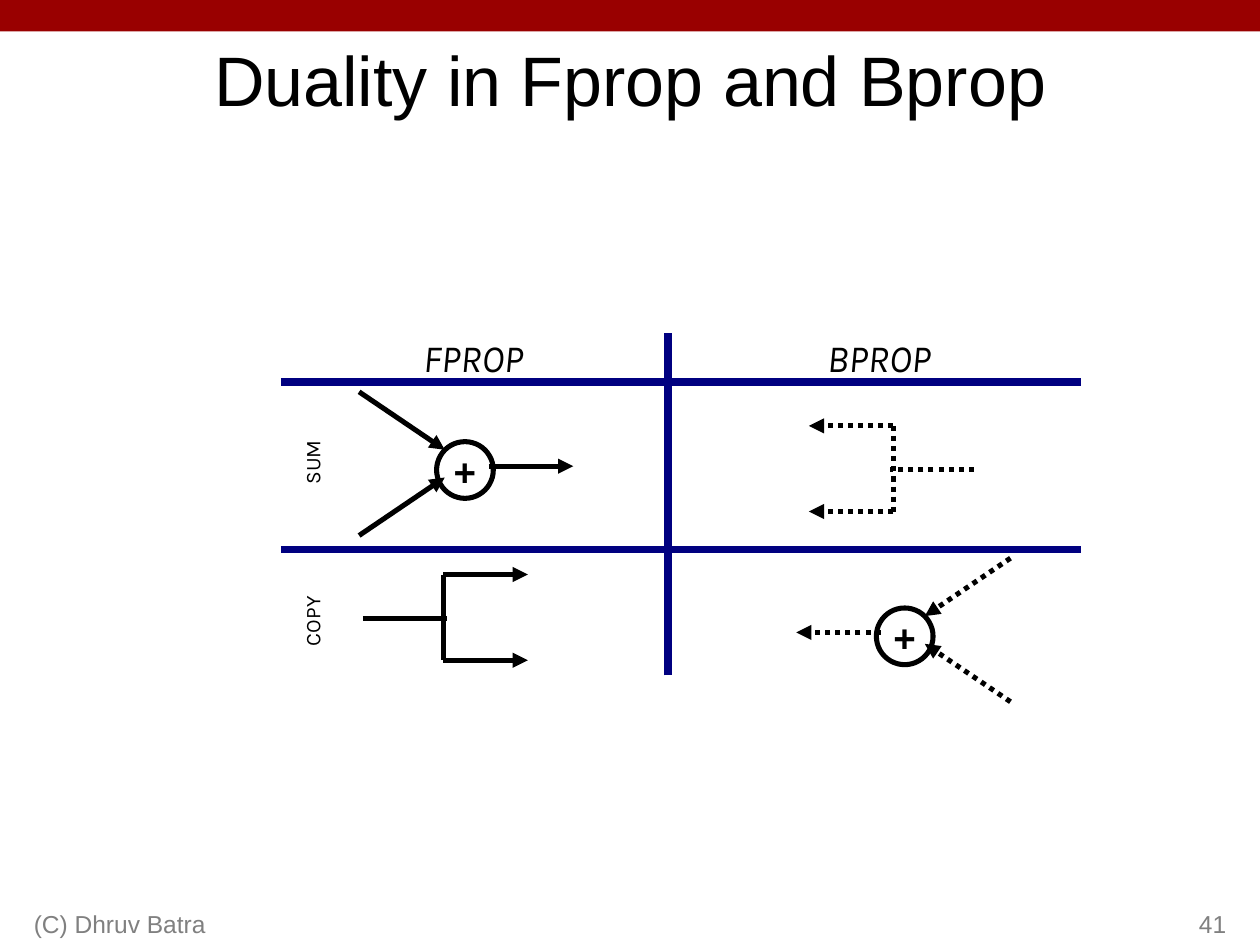
import pptx
import pptx.util
import pptx.dml.color
import pptx.enum.dml
import pptx.enum.shapes
import pptx.enum.text
import pptx.oxml
import pptx.oxml.ns
import lxml.etree

ALIGN = pptx.enum.text.PP_ALIGN
ANCHOR = pptx.enum.text.MSO_ANCHOR
SHAPE = pptx.enum.shapes.MSO_SHAPE
inches = pptx.util.Inches

# Content
WIDTH, HEIGHT = 10, 7.5
COLORS = {"bar": "990000", "ink": "000000", "footer": "808080", "rule": "000080"}
BAR_HEIGHT = HEIGHT / 30
ARROW_WEIGHT, RULE_WEIGHT = 2.89, 4.31
FRAME_INSETS = (0.1, 0.05, 0.1, 0.05)
LABEL_INSETS = (0.09, 0.07, 0.09, 0.04)

# text, box, size, font, colour, alignment, anchor, insets, italic, rotation
TEXTS = [
    ("Duality in Fprop and Bprop", (0.75, 0.25, 8.5, 0.75), 40, "Arial", "ink",
     ALIGN.CENTER, ANCHOR.MIDDLE, FRAME_INSETS, False, 0),
    ("(C) Dhruv Batra", (0.17, 7, 3.17, 0.5), 14, "Arial", "footer",
     ALIGN.LEFT, ANCHOR.BOTTOM, FRAME_INSETS, False, 0),
    ("41", (7.75, 7, 2.08, 0.5), 14, "Arial", "footer",
     ALIGN.RIGHT, ANCHOR.BOTTOM, FRAME_INSETS, False, 0),
    ("FPROP", (3.07, 2.58, 1.37, 0.76), 22, "Karla", "ink",
     ALIGN.CENTER, ANCHOR.TOP, LABEL_INSETS, True, 0),
    ("BPROP", (6.28, 2.58, 1.39, 0.48), 22, "Karla", "ink",
     ALIGN.CENTER, ANCHOR.TOP, LABEL_INSETS, True, 0),
    ("SUM", (2.02, 3.5, 0.91, 0.34), 12, "Karla", "ink",
     ALIGN.CENTER, ANCHOR.TOP, LABEL_INSETS, False, 270),
    ("COPY", (2.15, 4.63, 0.91, 0.6), 12, "Karla", "ink",
     ALIGN.CENTER, ANCHOR.TOP, LABEL_INSETS, False, 270),
]

# Gates: anchor point, direction of flow (1 right, -1 left), dotted
SUM_GATES = [((3.69, 3.73), 1, False), ((7.18, 5.05), -1, True)]
COPY_GATES = [((7.09, 3.38), -1, True), ((3.52, 4.56), 1, False)]

# Offsets from a gate's anchor for rightward flow: start, end, arrowhead
CIRCLE_SIZE = 0.45
SUM_LINES = [
    ((-0.84, -0.62), (-0.16, -0.16), True),
    ((-0.84, 0.52), (-0.16, 0.06), True),
    ((0.19, -0.03), (0.86, -0.03), True),
]
COPY_LINES = [
    ((0, 0), (0.67, 0), True),
    ((0, 0.68), (0.67, 0.68), True),
    ((0, 0), (0, 0.68), False),
    ((-0.64, 0.35), (0.03, 0.35), False),
]

# Rules of the two-by-two grid
RULE_LEFT, RULE_RIGHT = 2.23, 8.58
RULE_ROWS = (3.03, 4.36)
RULE_COLUMN, RULE_TOP, RULE_BOTTOM = 5.3, 2.64, 5.36


def color(name):
    return pptx.dml.color.RGBColor.from_string(COLORS[name])


def write(shape, text, size, font, color_name, align, anchor, insets,
          bold=False, italic=False, wrap=True):
    frame = shape.text_frame
    frame.word_wrap = wrap
    frame.vertical_anchor = anchor
    (frame.margin_left, frame.margin_top,
     frame.margin_right, frame.margin_bottom) = map(inches, insets)
    paragraph = frame.paragraphs[0]
    paragraph.alignment = align
    run = paragraph.add_run()
    run.text = text
    run.font.size = pptx.util.Pt(size)
    run.font.name = font
    run.font.bold = bold
    run.font.italic = italic
    run.font.color.rgb = color(color_name)


def add_line(slide, start, end, color_name="ink", weight=ARROW_WEIGHT,
             dotted=False, arrow=False):
    connector = slide.shapes.add_connector(
        pptx.enum.shapes.MSO_CONNECTOR.STRAIGHT, *map(inches, (*start, *end)))
    connector.line.color.rgb = color(color_name)
    connector.line.width = pptx.util.Pt(weight)
    if dotted:
        connector.line.dash_style = pptx.enum.dml.MSO_LINE.ROUND_DOT
    if arrow:
        lxml.etree.SubElement(connector.line._get_or_add_ln(),
                              pptx.oxml.ns.qn("a:tailEnd"), type="triangle")
    lxml.etree.SubElement(connector._element.spPr, pptx.oxml.ns.qn("a:effectLst"))


def add_gate_lines(slide, lines, origin, direction, dotted):
    def place(offset):
        return origin[0] + direction * offset[0], origin[1] + offset[1]

    for start, end, arrow in lines:
        add_line(slide, place(start), place(end), dotted=dotted, arrow=arrow)


def add_plus_circle(slide, center):
    left, top = (value - CIRCLE_SIZE / 2 for value in center)
    circle = slide.shapes.add_shape(
        SHAPE.OVAL, *map(inches, (left, top, CIRCLE_SIZE, CIRCLE_SIZE)))
    circle.shadow.inherit = False
    circle.fill.background()
    circle.line.color.rgb = color("ink")
    circle.line.width = pptx.util.Pt(ARROW_WEIGHT)
    write(circle, "+", 22, "Arial", "ink", ALIGN.CENTER, ANCHOR.MIDDLE,
          (0.11, 0.08, 0.11, 0.06), bold=True, wrap=False)


def main():
    presentation = pptx.Presentation()
    presentation.slide_width = inches(WIDTH)
    presentation.slide_height = inches(HEIGHT)
    slide = presentation.slides.add_slide(presentation.slide_layouts[6])

    # Top bar
    bar = slide.shapes.add_shape(SHAPE.RECTANGLE, 0, 0, inches(WIDTH), inches(BAR_HEIGHT))
    bar.shadow.inherit = False
    bar.fill.solid()
    bar.fill.fore_color.rgb = color("bar")
    bar.line.fill.background()

    # Gates
    for center, direction, dotted in SUM_GATES:
        add_plus_circle(slide, center)
        add_gate_lines(slide, SUM_LINES, center, direction, dotted)
    for corner, direction, dotted in COPY_GATES:
        add_gate_lines(slide, COPY_LINES, corner, direction, dotted)

    # Grid rules
    for row in RULE_ROWS:
        add_line(slide, (RULE_LEFT, row), (RULE_RIGHT, row), "rule", RULE_WEIGHT)
    add_line(slide, (RULE_COLUMN, RULE_BOTTOM), (RULE_COLUMN, RULE_TOP), "rule", RULE_WEIGHT)

    # Title, footer and labels
    for text, box, size, font, name, align, anchor, insets, italic, rotation in TEXTS:
        shape = slide.shapes.add_textbox(*map(inches, box))
        shape.rotation = rotation
        write(shape, text, size, font, name, align, anchor, insets, italic=italic)

    presentation.save("out.pptx")


if __name__ == "__main__":
    main()
